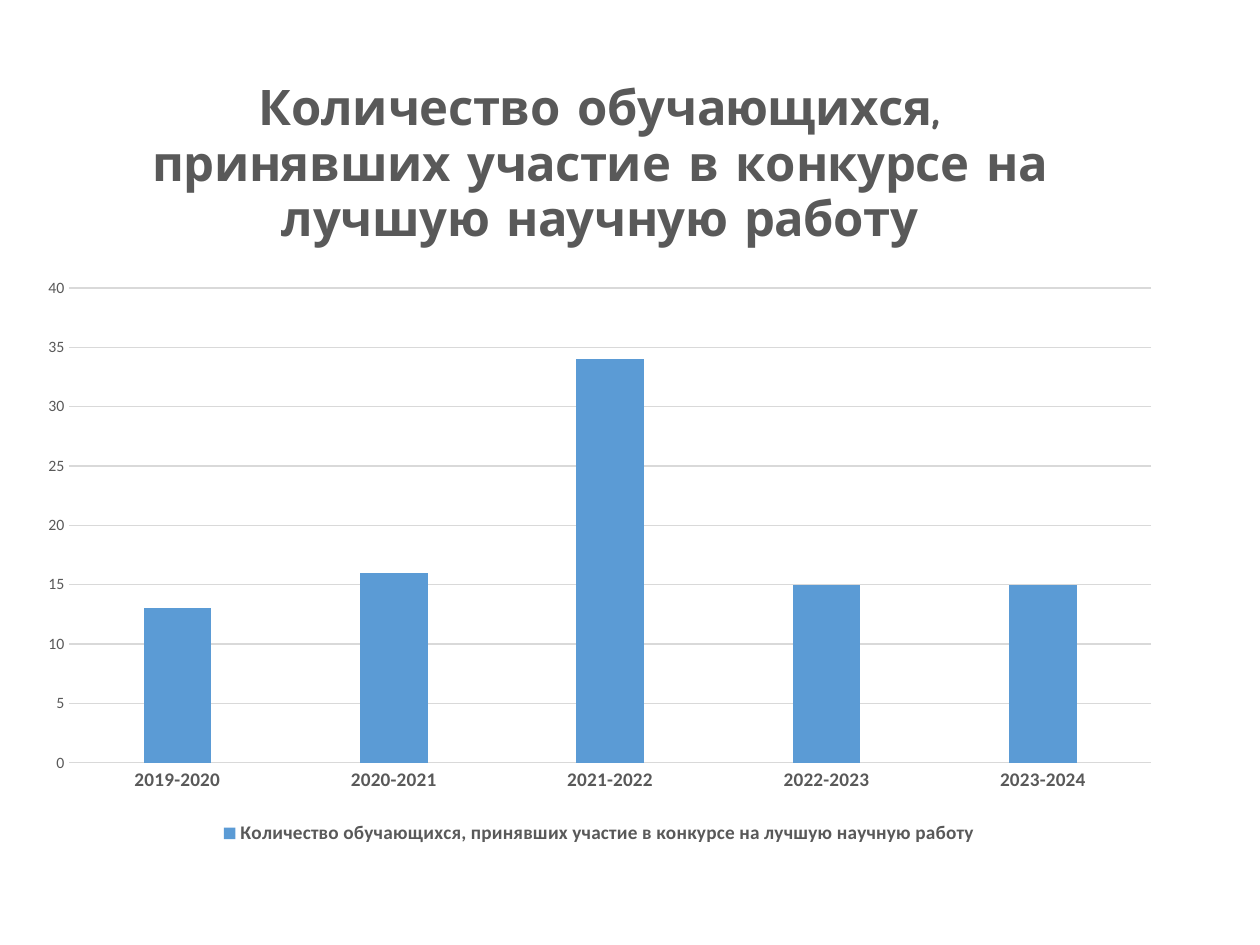
import pptx
import pptx.chart.data
import pptx.dml.color
import pptx.enum.chart
import pptx.util
from pptx.dml.color import RGBColor
from pptx.util import Cm, Pt

GREY = RGBColor(0x59, 0x59, 0x59)
LIGHT_GREY = RGBColor(0xD9, 0xD9, 0xD9)
BLUE = RGBColor(0x5B, 0x9B, 0xD5)
BLACK = RGBColor(0, 0, 0)

TITLE = "Количество обучающихся, принявших участие в конкурсе на лучшую научную работу"
PARTICIPANTS = {
    "2019-2020": 13,
    "2020-2021": 16,
    "2021-2022": 34,
    "2022-2023": 15,
    "2023-2024": 15,
}


def set_font(font: pptx.text.text.Font, size: float, color: RGBColor = GREY,
             bold: bool = False, name: str = "Calibri") -> None:
    font.size = Pt(size)
    font.bold = bold
    font.name = name
    font.color.rgb = color


def set_line(line: pptx.dml.line.LineFormat) -> None:
    line.color.rgb = LIGHT_GREY
    line.width = Pt(0.75)


def main() -> None:
    prs = pptx.Presentation()
    prs.slide_width, prs.slide_height = Cm(25.4), Cm(19.05)
    s = prs.slides.add_slide(prs.slide_layouts[6])

    # Chart with its data
    data = pptx.chart.data.CategoryChartData()
    data.categories = list(PARTICIPANTS)
    data.add_series(TITLE, list(PARTICIPANTS.values()))
    chart = s.shapes.add_chart(
        pptx.enum.chart.XL_CHART_TYPE.COLUMN_CLUSTERED,
        Cm(0.51), Cm(0.91), Cm(23.16), Cm(16.23), data).chart
    set_font(chart.font, 10, BLACK)

    # Title
    chart.has_title = True
    tf = chart.chart_title.text_frame
    tf.text = TITLE
    set_font(tf.paragraphs[0].font, 28, bold=True, name="Comic Neue")
    chart.chart_title.include_in_layout = False

    # Columns
    plot = chart.plots[0]
    plot.gap_width = 219
    plot.overlap = -27
    plot.vary_by_categories = False
    fill = plot.series[0].format.fill
    fill.solid()
    fill.fore_color.rgb = BLUE

    # Axes
    years, counts = chart.category_axis, chart.value_axis
    for axis in (years, counts):
        axis.major_tick_mark = pptx.enum.chart.XL_TICK_MARK.NONE
        axis.minor_tick_mark = pptx.enum.chart.XL_TICK_MARK.NONE
    set_font(years.tick_labels.font, 11, bold=True)
    set_line(years.format.line)
    set_font(counts.tick_labels.font, 9)
    counts.format.line.fill.background()
    counts.has_major_gridlines = True
    set_line(counts.major_gridlines.format.line)

    # Legend
    chart.has_legend = True
    chart.legend.position = pptx.enum.chart.XL_LEGEND_POSITION.BOTTOM
    chart.legend.include_in_layout = False
    set_font(chart.legend.font, 11, bold=True)

    prs.save("out.pptx")


if __name__ == "__main__":
    main()
